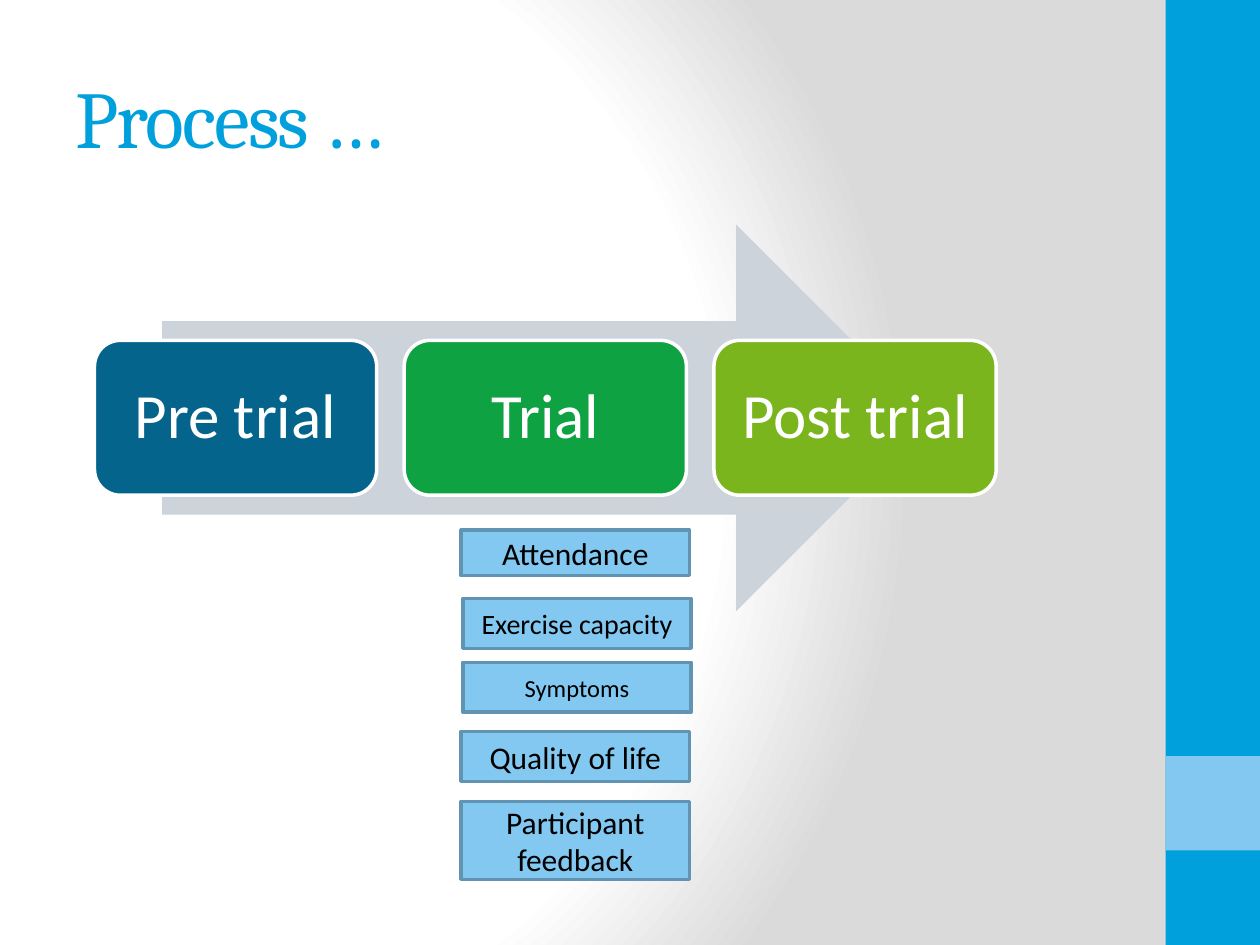
from dataclasses import dataclass

import pptx
import pptx.dml.color
import pptx.enum.shapes
import pptx.enum.text
import pptx.oxml
import pptx.oxml.ns
import pptx.util
from pptx.shapes.autoshape import Shape
from pptx.slide import Slide

Pt = pptx.util.Pt
Preset = pptx.enum.shapes.MSO_SHAPE
Align = pptx.enum.text.PP_ALIGN

COLOURS = {
    "accent": "00A0DC", "light": "82C8F0", "arrow": "CCD3DA", "edge": "6094B2",
    "white": "FFFFFF", "black": "000000", "shade": "DADADA",
    "pre": "05648C", "trial": "0FA242", "post": "7AB51D",
}


@dataclass
class Area:
    left: float
    top: float
    width: float
    height: float


@dataclass
class Phase:
    label: str
    colour: str


@dataclass
class Measure:
    label: str
    area: Area
    size: float


PHASES = [Phase("Pre trial", "pre"), Phase("Trial", "trial"), Phase("Post trial", "post")]
FIRST_CARD = Area(54, 194.5, 161.3, 88.5)
CARD_STEP = 177

MEASURES = [
    Measure("Attendance", Area(263.5, 303, 130.5, 26), 18),
    Measure("Exercise capacity", Area(264.5, 342, 130.5, 28.5), 16),
    Measure("Symptoms", Area(264.5, 378.5, 130.5, 28.5), 14),
    Measure("Quality of life", Area(263.5, 418, 130.5, 28.5), 18),
    Measure("Participant feedback", Area(263.5, 458, 130.5, 44.5), 18),
]


def rgb(name: str) -> pptx.dml.color.RGBColor:
    return pptx.dml.color.RGBColor.from_string(COLOURS[name])


def lengths(area: Area) -> tuple:
    return Pt(area.left), Pt(area.top), Pt(area.width), Pt(area.height)


def paint_background(slide: Slide) -> None:
    """Fill the page with a circular white-to-grey gradient."""
    slide.background.fill.gradient()
    plain = slide.element.find(".//" + pptx.oxml.ns.qn("a:gradFill"))
    stops = "".join(
        f'<a:gs pos="{percent * 1000}"><a:srgbClr val="{COLOURS[name]}"/></a:gs>'
        for percent, name in [(0, "white"), (75, "white"), (100, "shade")]
    )
    circular = pptx.oxml.parse_xml(
        f'<a:gradFill {pptx.oxml.ns.nsdecls("a")} rotWithShape="1">'
        f'<a:gsLst>{stops}</a:gsLst><a:path path="circle">'
        '<a:fillToRect l="20000" t="50000" r="100000" b="50000"/>'
        "</a:path></a:gradFill>"
    )
    plain.getparent().replace(plain, circular)


def add_box(slide: Slide, preset: Preset, area: Area, fill: str,
            line: str | None = None) -> Shape:
    box = slide.shapes.add_shape(preset, *lengths(area))
    box.shadow.inherit = False
    box.fill.solid()
    box.fill.fore_color.rgb = rgb(fill)
    if line:
        box.line.color.rgb = rgb(line)
        box.line.width = Pt(2)
    else:
        box.line.fill.background()
    return box


def write(box: Shape, text: str, size: float, colour: str, font: str = "Calibri",
          align: Align = Align.CENTER, spacing: float = 1, tracking: float = 0) -> None:
    """Put one vertically centred paragraph in the box; tracking is in points."""
    frame = box.text_frame
    frame.word_wrap = True
    frame.vertical_anchor = pptx.enum.text.MSO_ANCHOR.MIDDLE
    para = frame.paragraphs[0]
    para.alignment = align
    para.line_spacing = spacing
    span = para.add_run()
    span.text = text
    span.font.name = font
    span.font.size = Pt(size)
    span.font.color.rgb = rgb(colour)
    if tracking:
        span.font._element.set("spc", str(round(tracking * 100)))


def add_phases(slide: Slide) -> None:
    add_box(slide, Preset.RIGHT_ARROW, Area(92.6, 128.3, 438.5, 221), "arrow")
    for index, phase in enumerate(PHASES):
        area = Area(FIRST_CARD.left + index * CARD_STEP, FIRST_CARD.top,
                    FIRST_CARD.width, FIRST_CARD.height)
        card = add_box(slide, Preset.ROUNDED_RECTANGLE, area, phase.colour, "white")
        write(card, phase.label, 36, "white", spacing=0.9)


def main() -> None:
    deck = pptx.Presentation()
    deck.slide_width, deck.slide_height = Pt(720), Pt(540)
    slide = deck.slides.add_slide(deck.slide_layouts[6])
    paint_background(slide)
    add_box(slide, Preset.RECTANGLE, Area(666, 0, 54, 540), "accent")
    add_box(slide, Preset.RECTANGLE, Area(666, 432, 54, 54), "light")

    title = slide.shapes.add_textbox(*lengths(Area(36, 21.6, 600, 90)))
    write(title, "Process …", 46, "accent", "Cambria", Align.LEFT, tracking=-1)

    add_phases(slide)
    for measure in MEASURES:
        box = add_box(slide, Preset.RECTANGLE, measure.area, "light", "edge")
        write(box, measure.label, measure.size, "black")
    deck.save("out.pptx")


if __name__ == "__main__":
    main()
